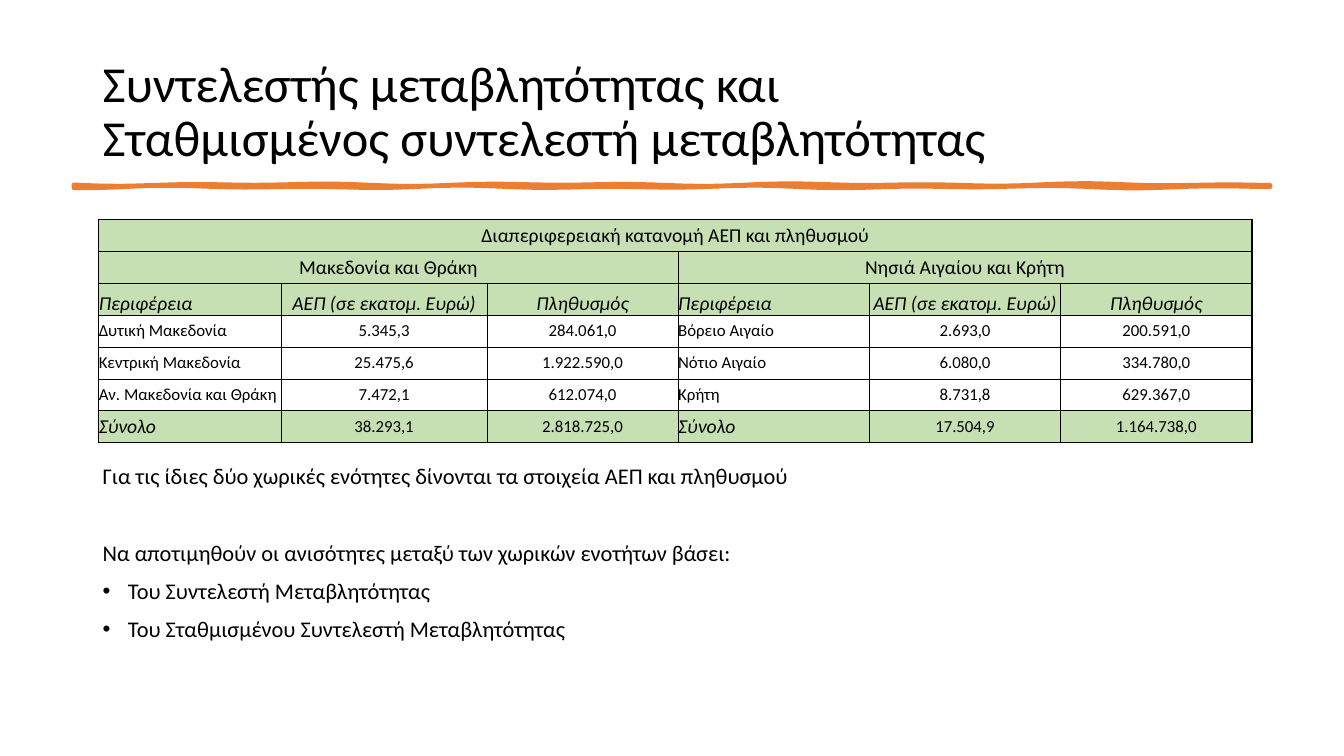
from math import sin

from lxml.etree import SubElement
from pptx import Presentation
from pptx.dml.color import RGBColor
from pptx.enum.text import MSO_ANCHOR, PP_ALIGN
from pptx.oxml.ns import qn
from pptx.util import Inches, Pt

BLACK, GREEN, ORANGE = "000000", "C6E0B4", "ED7D31"


def paint(code):
    return RGBColor.from_string(code)


class Deck:
    """Holds the style and the current slide; lengths are percent of the slide."""

    font = "Calibri"

    def __init__(self):
        self.prs = Presentation()
        self.prs.slide_width, self.prs.slide_height = Inches(13.33), Inches(7.5)
        self.slide = self.prs.slides.add_slide(self.prs.slide_layouts[6])

    def wide(self, share):
        return round(self.prs.slide_width * share / 100)

    def high(self, share):
        return round(self.prs.slide_height * share / 100)

    def area(self, left, top, width, height):
        return self.wide(left), self.high(top), self.wide(width), self.high(height)

    def run(self, par, words, size, slant=False):
        run = par.add_run()
        run.text = words
        run.font.name, run.font.size = self.font, Pt(size)
        run.font.italic = slant
        run.font.color.rgb = paint(BLACK)

    def box(self, area, anchor):
        frame = self.slide.shapes.add_textbox(*self.area(*area)).text_frame
        frame.word_wrap = True
        frame.vertical_anchor = anchor
        return frame

    def title(self, area, lines, size):
        par = self.box(area, MSO_ANCHOR.MIDDLE).paragraphs[0]
        par.line_spacing = 0.9
        for i, line in enumerate(lines):
            if i:
                par.add_line_break()
            self.run(par, line, size)

    def body(self, area, items, size):
        frame = self.box(area, MSO_ANCHOR.TOP)
        for i, (words, gap, dot) in enumerate(items):
            par = frame.add_paragraph() if i else frame.paragraphs[0]
            par.line_spacing, par.space_before = 0.9, Pt(gap)
            if dot:
                props = par._p.get_or_add_pPr()
                props.set("marL", str(Inches(0.25)))
                props.set("indent", str(-Inches(0.25)))
                SubElement(props, qn("a:buFont"), typeface="Arial")
                SubElement(props, qn("a:buChar"), char="•")
            self.run(par, words, size)

    def stroke(self, left, right, top, base):
        """A hand-drawn rule: two wavy edges closed into one outline."""
        steps = 120

        def edge(level, shift):
            return [(self.wide(left + (right - left) * i / steps),
                     self.high(level + 0.1 * sin(i * 0.42 + shift)
                               + 0.08 * sin(i * 0.23 + 2 * shift)))
                    for i in range(steps + 1)]

        first, *rest = edge(top, 0) + edge(base, 1)[::-1]
        pen = self.slide.shapes.build_freeform(*first)
        pen.add_line_segments(rest, close=True)
        shape = pen.convert_to_shape()
        shape.shadow.inherit = False
        shape.fill.solid()
        shape.fill.fore_color.rgb = paint(ORANGE)
        shape.line.color.rgb = paint(ORANGE)
        shape.line.width = Pt(3.25)

    def border(self, cell, sides):
        props = cell._tc.get_or_add_tcPr()
        for side, heavy in sides.items():
            line = SubElement(props, qn("a:ln" + side), w=str(Pt(1 if heavy else 0.5)))
            fill = SubElement(line, qn("a:solidFill"))
            SubElement(fill, qn("a:srgbClr"), val=BLACK)

    def table(self, left, top, cols, row, data, spans):
        area = self.area(left, top, sum(cols), row * len(data))
        table = self.slide.shapes.add_table(len(data), len(cols), *area).table
        table.first_row = table.horz_banding = False
        for i, share in enumerate(cols):
            table.columns[i].width = self.wide(share)
        for line in table.rows:
            line.height = self.high(row)
        for r, c, end in spans:
            table.cell(r, c).merge(table.cell(r, end))

        last = len(data) - 1
        rules, walls = {0, 1, 3, last}, {0, 3, 6}  # heavy grid lines
        for r, texts in enumerate(data):
            for c, words in enumerate(texts):
                cell = table.cell(r, c)
                if cell.is_spanned:
                    continue
                stop = c + cell.span_width
                thick = walls | {1} if r == last else walls
                self.border(cell, {"L": c in thick, "R": stop in thick,
                                   "T": r in rules, "B": r + 1 in rules})
                head, name = r < 3, c % 3 == 0
                if head or r == last:
                    cell.fill.solid()
                    cell.fill.fore_color.rgb = paint(GREEN)
                else:
                    cell.fill.background()
                cell.margin_left = cell.margin_right = 0
                cell.margin_top = cell.margin_bottom = 0
                cell.vertical_anchor = MSO_ANCHOR.BOTTOM if r == 2 else MSO_ANCHOR.MIDDLE
                par = cell.text_frame.paragraphs[0]
                par.alignment = PP_ALIGN.LEFT if name and r > 1 else PP_ALIGN.CENTER
                label = r == last and name
                self.run(par, words, 14 if head or label else 12, r == 2 or label)


def main():
    deck = Deck()

    # Title and the rule under it
    deck.title((6.9, 5.33, 86.25, 19.33),
               ["Συντελεστής μεταβλητότητας και",
                "Σταθμισμένος συντελεστή μεταβλητότητας"], 36)
    deck.stroke(5.5, 94.5, 24.45, 24.7)

    # Body text
    deck.body((6.9, 60.93, 86.25, 34.67), [
        ("Για τις ίδιες δύο χωρικές ενότητες δίνονται τα στοιχεία ΑΕΠ και πληθυσμού", 10, False),
        ("Να αποτιμηθούν οι ανισότητες μεταξύ των χωρικών ενοτήτων βάσει:", 37.5, False),
        ("Του Συντελεστή Μεταβλητότητας", 10, True),
        ("Του Σταθμισμένου Συντελεστή Μεταβλητότητας", 10, True),
    ], 16)

    # Table of regions
    heads = ["Περιφέρεια", "ΑΕΠ (σε εκατομ. Ευρώ)", "Πληθυσμός"]
    data = [
        ["Διαπεριφερειακή κατανομή ΑΕΠ και πληθυσμού", "", "", "", "", ""],
        ["Μακεδονία και Θράκη", "", "", "Νησιά Αιγαίου και Κρήτη", "", ""],
        heads * 2,
        ["Δυτική Μακεδονία", "5.345,3", "284.061,0", "Βόρειο Αιγαίο", "2.693,0", "200.591,0"],
        ["Κεντρική Μακεδονία", "25.475,6", "1.922.590,0", "Νότιο Αιγαίο", "6.080,0", "334.780,0"],
        ["Αν. Μακεδονία και Θράκη", "7.472,1", "612.074,0", "Κρήτη", "8.731,8", "629.367,0"],
        ["Σύνολο", "38.293,1", "2.818.725,0", "Σύνολο", "17.504,9", "1.164.738,0"],
    ]
    deck.table(7.35, 29.07, [13.58, 15.3] + [14.23] * 4, 4.21, data,
               [(0, 0, 5), (1, 0, 2), (1, 3, 5)])

    deck.prs.save("out.pptx")


if __name__ == "__main__":
    main()
